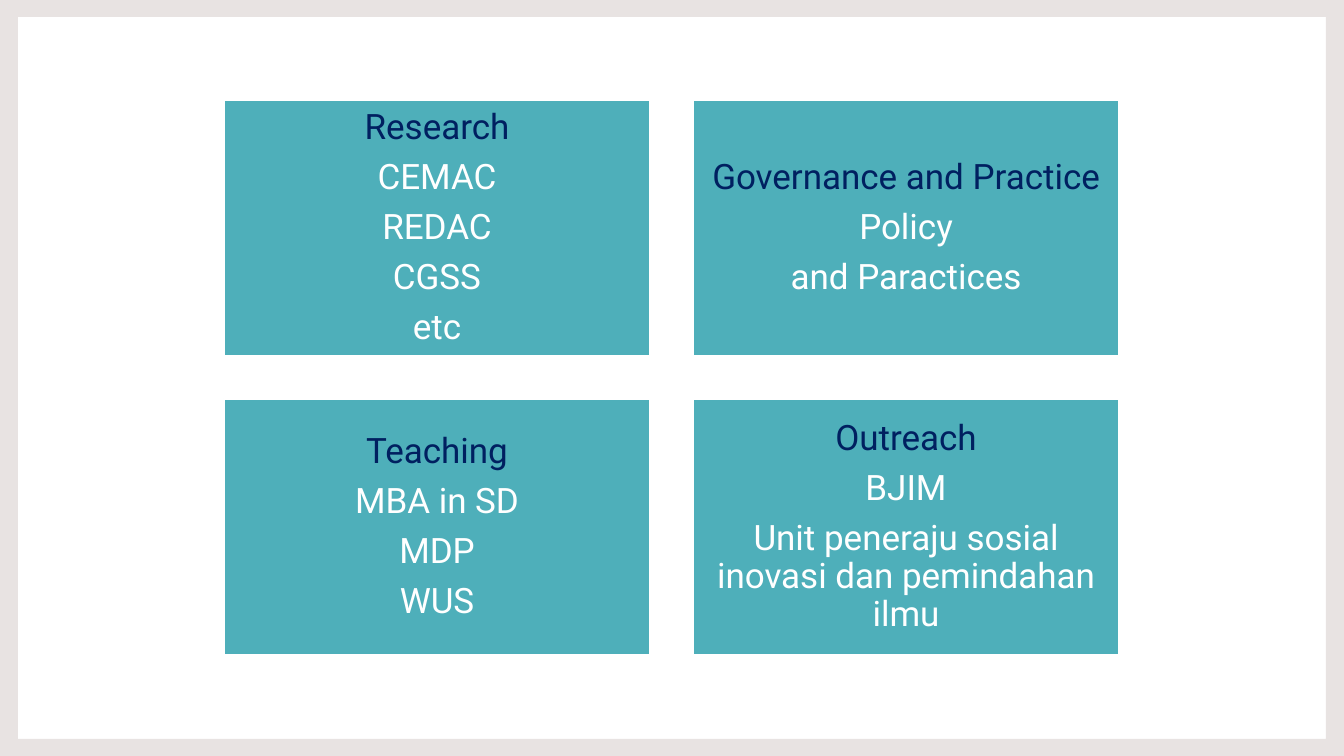
from pptx import Presentation
from pptx.dml.color import RGBColor
from pptx.enum.shapes import MSO_SHAPE
from pptx.enum.text import MSO_ANCHOR, PP_ALIGN
from pptx.util import Pt

RECTANGLE = MSO_SHAPE.RECTANGLE
MIDDLE = MSO_ANCHOR.MIDDLE
CENTER = PP_ALIGN.CENTER

EMU_PER_PX = 914400 / 100.8
SLIDE_W, SLIDE_H = 1344, 756


def px(length):
    return round(length * EMU_PER_PX)


def color(hex_string):
    return RGBColor.from_string(hex_string)


class SlideBuilder:
    FONT = "Roboto"
    TEXT_SIZE = 25
    FRAME = "E8E3E2"
    TEAL = "4EAFBA"
    NAVY = "002060"
    WHITE = "FFFFFF"
    INSET = 10

    def __init__(self, slide):
        self.slide = slide

    def frame(self, left, top, right, bottom):
        """Border from the slide edge to the given inner opening."""
        outline = self.slide.shapes.build_freeform(0, 0, scale=EMU_PER_PX)
        outline.add_line_segments([(SLIDE_W, 0), (SLIDE_W, SLIDE_H), (0, SLIDE_H)])
        outline.move_to(left, top)
        outline.add_line_segments([(left, bottom), (right, bottom), (right, top)])
        border = outline.convert_to_shape()
        border.shadow.inherit = False
        border.fill.solid()
        border.fill.fore_color.rgb = color(self.FRAME)
        border.line.fill.background()

    def card(self, left, top, width, height, heading, items):
        """Teal rectangle with a navy heading above white items."""
        card = self.slide.shapes.add_shape(
            RECTANGLE, px(left), px(top), px(width), px(height))
        card.shadow.inherit = False
        card.fill.solid()
        card.fill.fore_color.rgb = color(self.TEAL)
        card.line.color.rgb = color(self.WHITE)
        card.line.width = Pt(1)

        content = card.text_frame
        content.word_wrap = True
        content.vertical_anchor = MIDDLE
        content.margin_left = content.margin_right = px(self.INSET)
        content.margin_top = content.margin_bottom = px(self.INSET)
        content.text = "\n".join([heading, *items])
        for index, paragraph in enumerate(content.paragraphs):
            paragraph.alignment = CENTER
            paragraph.line_spacing = 0.9
            paragraph.space_after = Pt(8.75)
            font = paragraph.runs[0].font
            font.name = self.FONT
            font.size = Pt(self.TEXT_SIZE)
            font.color.rgb = color(self.WHITE if index else self.NAVY)


AREAS = [
    ("Research", ["CEMAC", "REDAC", "CGSS", "etc"]),
    ("Governance and Practice", ["Policy", "and Paractices"]),
    ("Teaching", ["MBA in SD", "MDP", "WUS"]),
    ("Outreach", ["BJIM", "Unit peneraju sosial inovasi dan pemindahan ilmu"]),
]
GRID_LEFT, GRID_TOP = 224, 100
CARD_W, CARD_H = 426, 256
GAP = 43


def main():
    presentation = Presentation()
    presentation.slide_width = px(SLIDE_W)
    presentation.slide_height = px(SLIDE_H)
    blank_layout = presentation.slide_layouts[6]
    builder = SlideBuilder(presentation.slides.add_slide(blank_layout))

    # Slide border
    builder.frame(18, 17, 1326, 739)

    # Two-by-two grid of areas
    for index, (heading, items) in enumerate(AREAS):
        row, column = divmod(index, 2)
        builder.card(GRID_LEFT + column * (CARD_W + GAP),
                     GRID_TOP + row * (CARD_H + GAP),
                     CARD_W, CARD_H, heading, items)

    presentation.save("out.pptx")


if __name__ == "__main__":
    main()
